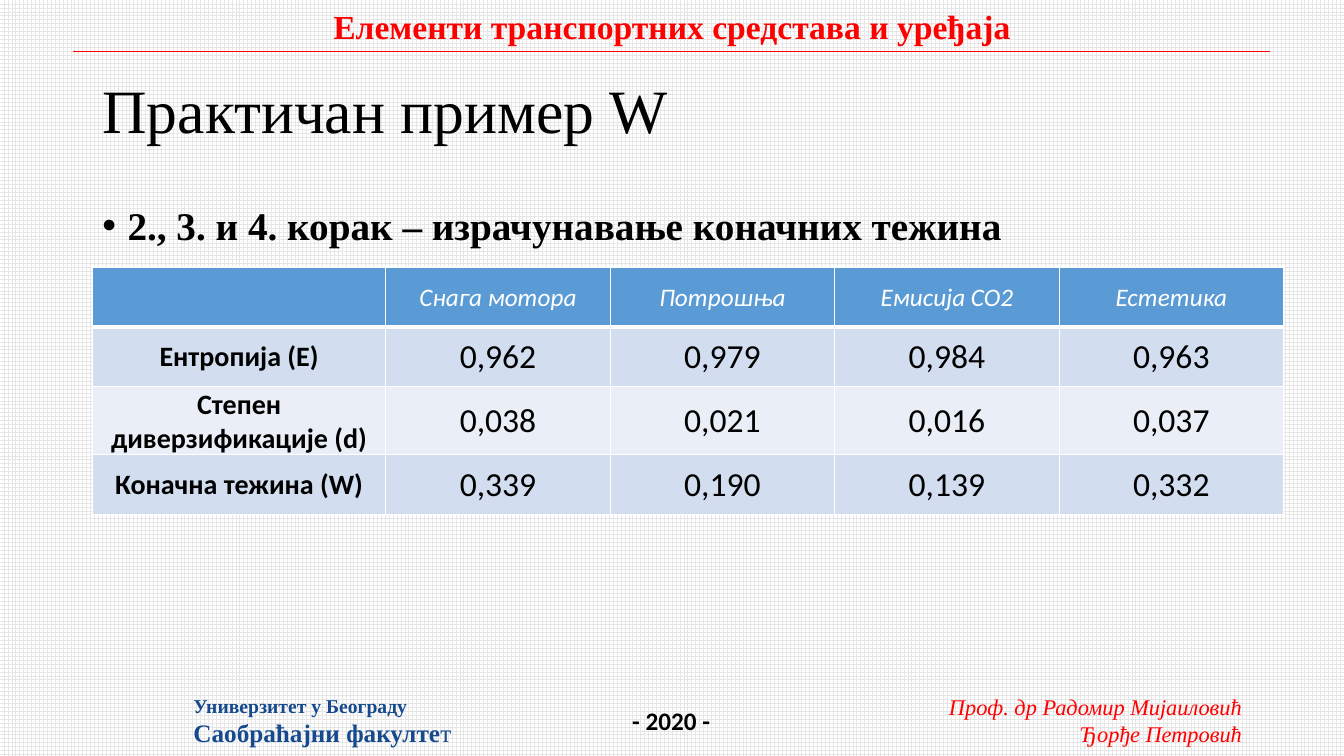
from lxml.etree import SubElement
from pptx import Presentation
from pptx.dml.color import RGBColor
from pptx.enum.dml import MSO_PATTERN
from pptx.enum.shapes import MSO_CONNECTOR
from pptx.enum.text import MSO_ANCHOR as Anchor, MSO_AUTO_SIZE as AutoSize, PP_ALIGN as Align
from pptx.oxml.ns import qn
from pptx.util import Inches, Pt

SLIDE_W, SLIDE_H = Inches(13.33), Inches(7.5)
LEFT = 6.88
SERIF, SANS = "Times New Roman", "Calibri"
COLORS = {
    "red": "FF0000", "navy": "16498E", "black": "000000", "white": "FFFFFF",
    "grid": "E7E6E6", "header": "5B9BD5", "band": "D2DEEF", "light_band": "EAEFF7",
}
TABLE = [
    ["", "Снага мотора", "Потрошња", "Емисија CO2", "Естетика"],
    ["Ентропија (Е)", "0,962", "0,979", "0,984", "0,963"],
    ["Степен диверзификације (d)", "0,038", "0,021", "0,016", "0,037"],
    ["Коначна тежина (W)", "0,339", "0,190", "0,139", "0,332"],
]


def rgb(name):
    return RGBColor.from_string(COLORS[name])


def px(share):
    """Convert a percentage of the slide's width to a length."""
    return round(SLIDE_W * share / 100)


def py(share):
    """Convert a percentage of the slide's height to a length."""
    return round(SLIDE_H * share / 100)


def add_run(p, text, *, size, font=SERIF, color="black", bold=False, italic=False):
    r = p.add_run()
    r.text = text
    r.font.name, r.font.size = font, Pt(size)
    r.font.bold, r.font.italic = bold, italic
    r.font.color.rgb = rgb(color)


def add_text(s, box, lines, *, align=Align.LEFT, anchor=Anchor.TOP, wrap=False,
             spacing=None, **fmt):
    """Add a text box; each line is a list of (text, format changes)."""
    x, y, w, h = box
    tf = s.shapes.add_textbox(px(x), py(y), px(w), py(h)).text_frame
    tf.word_wrap, tf.vertical_anchor = wrap, anchor
    tf.auto_size = AutoSize.NONE if wrap else AutoSize.SHAPE_TO_FIT_TEXT
    for i, line in enumerate(lines):
        p = tf.add_paragraph() if i else tf.paragraphs[0]
        p.alignment = align
        p.line_spacing = spacing
        for text, changes in line:
            add_run(p, text, **{**fmt, **changes})
    return tf


def add_bullet(p, indent):
    pPr = p._p.get_or_add_pPr()
    pPr.set("marL", str(indent))
    pPr.set("indent", str(-indent))
    SubElement(pPr, qn("a:buFont"), typeface="Arial")
    SubElement(pPr, qn("a:buChar"), char="•")


def add_rule(s, x1, x2, y):
    line = s.shapes.add_connector(MSO_CONNECTOR.STRAIGHT, px(x1), py(y), px(x2), py(y))
    line.line.color.rgb = rgb("red")
    line.line.width = Pt(0.5)
    SubElement(line._element.spPr, qn("a:effectLst"))


def set_borders(cell, **widths):
    tcPr = cell._tc.get_or_add_tcPr()
    for side in "LRTB":
        ln = SubElement(tcPr, qn(f"a:ln{side}"), w=str(Pt(widths.get(side, 1))))
        SubElement(SubElement(ln, qn("a:solidFill")), qn("a:srgbClr"), val=COLORS["white"])


def cell_format(row, col):
    if row == 0:
        return {"size": 18, "color": "white", "italic": True}
    return {"size": 20, "bold": True} if col == 0 else {"size": 24}


def add_weights_table(s, x, y, first_col, other_col, row_h):
    n_rows, n_cols = len(TABLE), len(TABLE[0])
    width = first_col + other_col * (n_cols - 1)
    table = s.shapes.add_table(n_rows, n_cols, px(x), py(y), px(width),
                               py(row_h * n_rows)).table
    for c, col in enumerate(table.columns):
        col.width = px(other_col if c else first_col)
    for r, values in enumerate(TABLE):
        fill = ("light_band", "band")[r % 2] if r else "header"
        for c, value in enumerate(values):
            cell = table.cell(r, c)
            set_borders(cell, B=1 if r else 3, T=3 if r == 1 else 1)
            cell.fill.solid()
            cell.fill.fore_color.rgb = rgb(fill)
            cell.vertical_anchor = Anchor.MIDDLE
            cell.margin_left = cell.margin_top = cell.margin_right = Inches(0.01)
            cell.margin_bottom = 0
            p = cell.text_frame.paragraphs[0]
            p.alignment = Align.CENTER
            if value:
                add_run(p, value, font=SANS, **cell_format(r, c))


def set_grid_background(s):
    fill = s.background.fill
    fill.patterned()
    fill.pattern = MSO_PATTERN.LARGE_GRID
    fill.fore_color.rgb, fill.back_color.rgb = rgb("grid"), rgb("white")


def add_frame(s):
    """Add the course heading, its rule and the footer."""
    add_text(s, (69.15, 91.07, 24, 8.53),
             [[("Проф. др Радомир Мијаиловић", {})], [("Ђорђе Петровић", {})]],
             align=Align.RIGHT, size=16, color="red", italic=True)
    add_rule(s, 5.4, 94.5, 6.8)
    add_text(s, (23.8, 0.13, 52.4, 6.67),
             [[("Елементи транспортних средстава и уређаја", {})]],
             align=Align.CENTER, size=24, color="red", bold=True)
    add_text(s, (46.3, 92.67, 7.35, 5.33), [[("- 2020 -", {})]],
             size=18, font=SANS, bold=True)
    add_text(s, (13.65, 91.07, 20.93, 8.53),
             [[("Универзитет у Београду", {"size": 14})],
              [("Саобраћајни факулте", {}), ("т", {"bold": False})]],
             size=18, color="navy", bold=True)


def main():
    prs = Presentation()
    prs.slide_width, prs.slide_height = SLIDE_W, SLIDE_H
    s = prs.slides.add_slide(prs.slide_layouts[6])
    set_grid_background(s)
    add_frame(s)
    add_text(s, (LEFT, 5.33, 86.25, 19.33), [[("Практичан пример W", {})]],
             anchor=Anchor.MIDDLE, wrap=True, spacing=0.9, size=44)
    tf = add_text(s, (LEFT, 26.67, 86.25, 63.47),
                  [[("2., 3. и 4. корак – израчунавање коначних тежина", {})]],
                  wrap=True, spacing=0.9, size=28, bold=True)
    add_bullet(tf.paragraphs[0], Inches(0.25))
    add_weights_table(s, LEFT, 35.33, first_col=21.83, other_col=16.7, row_h=7.9)
    prs.save("out.pptx")


if __name__ == "__main__":
    main()
